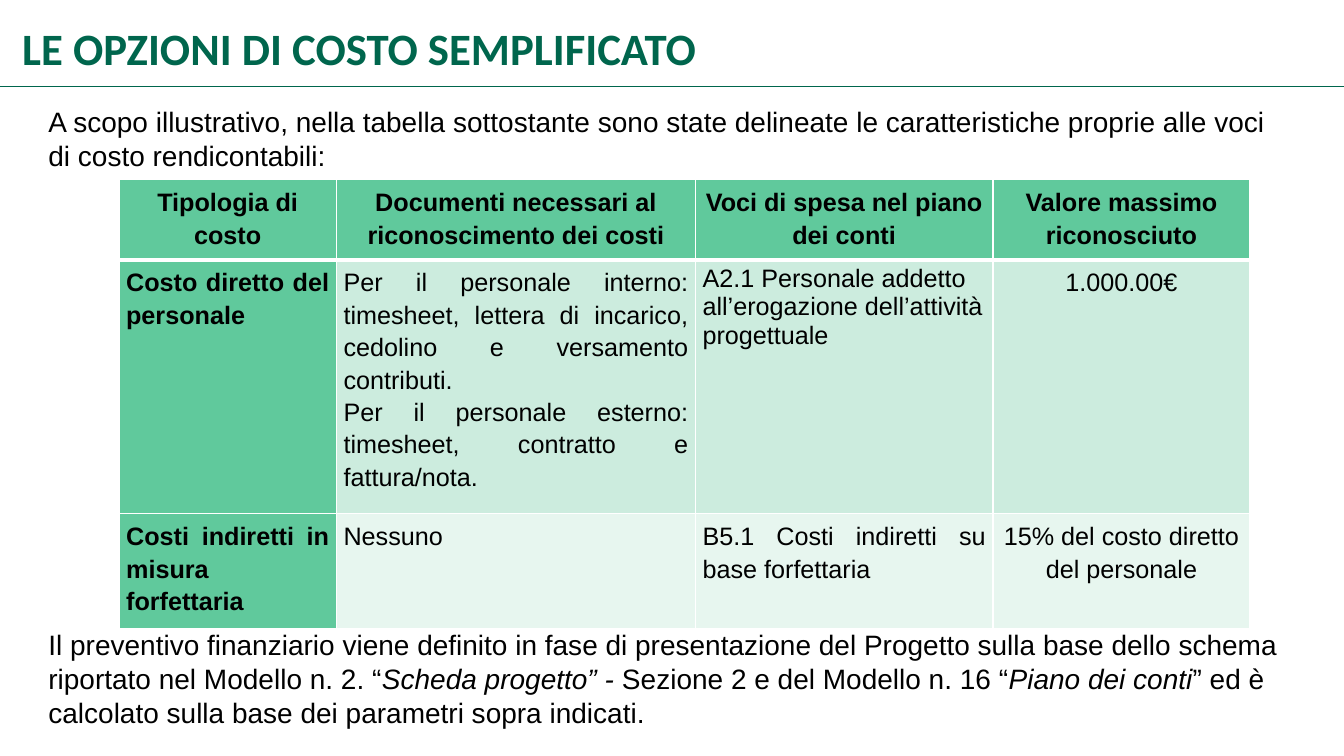
import pptx
import pptx.util
import pptx.dml.color
import pptx.enum.shapes
import pptx.enum.text
import pptx.oxml.ns
from dataclasses import dataclass
from lxml import etree

Cm = pptx.util.Cm
Pt = pptx.util.Pt
Align = pptx.enum.text.PP_ALIGN

TITLE = "LE OPZIONI DI COSTO SEMPLIFICATO"
# Each text is a list of (words, italic) runs.
INTRO = [("A scopo illustrativo, nella tabella sottostante sono state delineate le "
          "caratteristiche proprie alle voci di costo rendicontabili:", False)]
CLOSING = [
    ("Il preventivo finanziario viene definito in fase di presentazione del Progetto "
     "sulla base dello schema riportato nel Modello n. 2. “", False),
    ("Scheda progetto” -", True),
    (" Sezione 2 e del Modello n. 16 “", False),
    ("Piano dei conti", True),
    ("” ed è calcolato sulla base dei parametri sopra indicati.", False),
]
COST_ROWS = [
    ["Tipologia di costo", "Documenti necessari al riconoscimento dei costi",
     "Voci di spesa nel piano dei conti", "Valore massimo riconosciuto"],
    ["Costo diretto del personale",
     "Per il personale interno: timesheet, lettera di incarico, cedolino e versamento "
     "contributi.\nPer il personale esterno: timesheet, contratto e fattura/nota.",
     "A2.1 Personale addetto all’erogazione dell’attività progettuale", "1.000.00€"],
    ["Costi indiretti in misura forfettaria", "Nessuno",
     "B5.1 Costi indiretti su base forfettaria", "15% del costo diretto del personale"],
]
COLUMN_WIDTHS = [5.48, 9.05, 7.5, 6.48]
ROW_HEIGHTS = [1.98, 6.38, 2.9]
LEFT_ALIGNED_CELL = (1, 2)
VALUE_COLUMN = 3


@dataclass(frozen=True)
class Theme:
    title_font: str = "Calibri"
    body_font: str = "Arial"
    title_size: float = 32
    body_size: float = 20
    table_size: float = 18
    green: str = "00664D"
    black: str = "000000"
    border: str = "FFFFFF"
    heading_fill: str = "60C99C"
    row_fills: tuple = ("60C99C", "CCECDE", "E7F6EF")
    thin: float = 0.96
    thick: float = 3


THEME = Theme()


def rgb(value):
    return pptx.dml.color.RGBColor.from_string(value)


def style_font(font, name, size, color, bold=False):
    font.name, font.size, font.bold = name, Pt(size), bold
    font.color.rgb = rgb(color)


def add_title(slide):
    title = slide.shapes.title
    title.left, title.top, title.width, title.height = Cm(0.56), Cm(0.41), Cm(30.48), Cm(1.75)
    frame = title.text_frame
    frame.text = TITLE
    frame.margin_left = frame.margin_right = frame.margin_top = frame.margin_bottom = 0
    frame.vertical_anchor = pptx.enum.text.MSO_ANCHOR.MIDDLE
    frame.auto_size = pptx.enum.text.MSO_AUTO_SIZE.NONE
    heading = frame.paragraphs[0]
    heading.alignment = Align.LEFT
    heading.line_spacing = 0.9
    style_font(heading.font, THEME.title_font, THEME.title_size, THEME.green, True)


def add_title_rule(slide, width):
    rule = slide.shapes.add_connector(
        pptx.enum.shapes.MSO_CONNECTOR.STRAIGHT, 0, Cm(2.17), width, Cm(2.17))
    rule.line.color.rgb = rgb(THEME.green)
    rule.line.width = Pt(0.75)
    etree.SubElement(rule._element.spPr, pptx.oxml.ns.qn("a:effectLst"))


def add_body_text(slide, top, height, runs):
    box = slide.shapes.add_textbox(Cm(0.97), Cm(top), Cm(31.9), Cm(height))
    box.text_frame.word_wrap = True
    paragraph = box.text_frame.paragraphs[0]
    style_font(paragraph.font, THEME.body_font, THEME.body_size, THEME.black)
    for words, italic in runs:
        run = paragraph.add_run()
        run.text = words
        run.font.italic = italic


def set_borders(cell, row):
    """White rules, thick between the heading row and the first cost row."""
    widths = {"lnL": THEME.thin, "lnR": THEME.thin,
              "lnT": THEME.thick if row == 1 else THEME.thin,
              "lnB": THEME.thick if row == 0 else THEME.thin}
    properties = cell._tc.get_or_add_tcPr()
    for side, width in widths.items():
        line = etree.SubElement(properties, pptx.oxml.ns.qn("a:" + side), w=str(Pt(width)))
        fill = etree.SubElement(line, pptx.oxml.ns.qn("a:solidFill"))
        etree.SubElement(fill, pptx.oxml.ns.qn("a:srgbClr"), val=THEME.border)


def cell_alignment(row, column):
    if row == 0 or column == VALUE_COLUMN:
        return Align.CENTER
    return Align.LEFT if (row, column) == LEFT_ALIGNED_CELL else Align.JUSTIFY


def fill_cell(cell, row, column, words):
    heading = row == 0 or column == 0
    set_borders(cell, row)
    cell.fill.solid()
    cell.fill.fore_color.rgb = rgb(THEME.heading_fill if heading else THEME.row_fills[row])
    cell.margin_left = cell.margin_right = Cm(0.18)
    cell.margin_top = cell.margin_bottom = Cm(0.13)
    cell.text_frame.text = words
    for paragraph in cell.text_frame.paragraphs:
        paragraph.alignment = cell_alignment(row, column)
        paragraph.line_spacing = 1.0 if (row, column) == LEFT_ALIGNED_CELL else 1.15
        style_font(paragraph.font, THEME.body_font, THEME.table_size, THEME.black, heading)


def add_cost_table(slide):
    costs = slide.shapes.add_table(
        len(COST_ROWS), len(COLUMN_WIDTHS), Cm(3), Cm(4.53),
        Cm(sum(COLUMN_WIDTHS)), Cm(sum(ROW_HEIGHTS))).table
    costs.horz_banding = False
    for column, width in zip(costs.columns, COLUMN_WIDTHS):
        column.width = Cm(width)
    for row, height in zip(costs.rows, ROW_HEIGHTS):
        row.height = Cm(height)
    for row, texts in enumerate(COST_ROWS):
        for column, words in enumerate(texts):
            fill_cell(costs.cell(row, column), row, column, words)


def main():
    deck = pptx.Presentation()
    deck.slide_width, deck.slide_height = Cm(33.88), Cm(19.05)
    slide = deck.slides.add_slide(deck.slide_layouts[5])
    add_title(slide)
    add_title_rule(slide, deck.slide_width)
    add_body_text(slide, 2.51, 1.95, INTRO)
    add_body_text(slide, 15.7, 2.8, CLOSING)
    add_cost_table(slide)
    deck.save("out.pptx")


if __name__ == "__main__":
    main()
